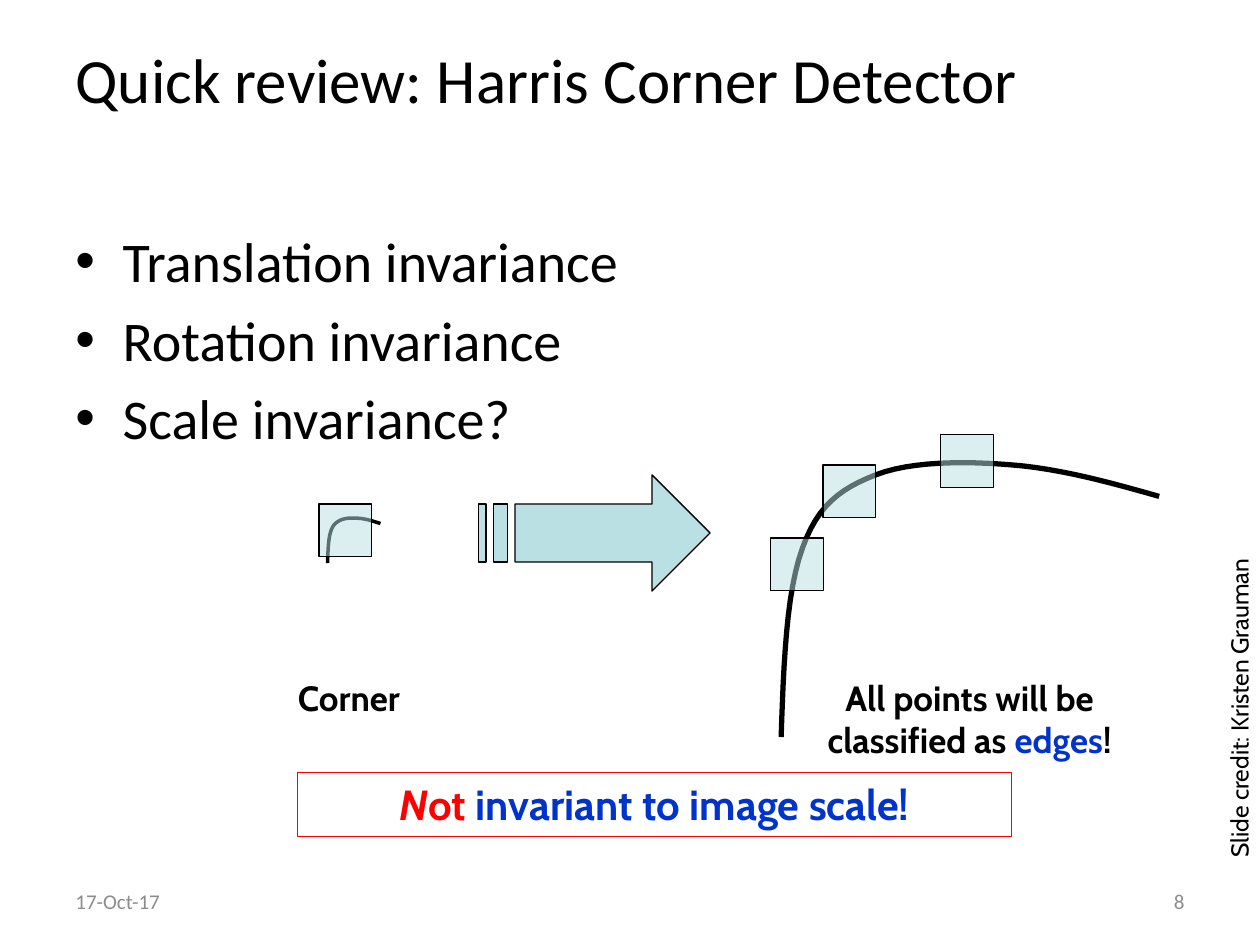
"""Build the slide that reviews the invariances of the Harris corner detector."""
from lxml import etree
from pptx import Presentation
from pptx.dml.color import RGBColor
from pptx.enum.shapes import MSO_SHAPE as SHAPE
from pptx.enum.text import MSO_ANCHOR as ANCHOR, PP_ALIGN as ALIGN
from pptx.oxml.ns import qn
from pptx.util import Pt

BLACK, GREY, RED, BLUE, TEAL = "000000", "8C8C8C", "FF0000", "0033CC", "BBE0E3"
TITLE = "Quick review: Harris Corner Detector"
BULLETS = ["Translation invariance", "Rotation invariance", "Scale invariance?"]
VERDICT = [("N", RED, True, True), ("ot", RED, True, False),
           (" invariant to image scale!", BLUE, True, False)]
EDGES = [("All points will be classified as ", BLACK, True, False),
         ("edges", BLUE, True, False), ("!", BLACK, True, False)]
CORNER = [("Corner", BLACK, True, False)]
CREDIT = [("Slide credit: Kristen Grauman", BLACK, False, False)]
DATE = [("17-Oct-17", GREY, False, False)]
NUMBER = [("8", GREY, False, False)]

CURVE_SIZE = (216, 157.7)
CURVE = [(0, 157.7), (1.4, 116.6), (2.9, 74.9), (12.2, 49.7), (20.9, 25.2),
         (33.8, 15.8), (54, 7.9), (74.2, 0), (105, 0), (131.8, 2.2),
         (159, 4.3), (188, 12.2), (216, 20.2)]
STEPS = 12
WINDOW = 30.2
SCALES = [
    {"box": (187.2, 295.9, 30.2, 25.9), "line": 2, "windows": [(182.2, 288)]},
    {"box": (446.4, 263.5, 216, 157.7), "line": 3,
     "windows": [(440.3, 307.4), (470.2, 265.7), (537.5, 248.4)]},
]
ARROW = (273.6, 271.4, 132.2, 66.4)


def rgb(value):
    return RGBColor.from_string(value)


def style(sp, fill=None, line=BLACK, width=0.75, alpha=None):
    sp.shadow.inherit = False
    if fill:
        sp.fill.solid()
        sp.fill.fore_color.rgb = rgb(fill)
        if alpha:
            color = sp.fill._xPr.find(qn("a:solidFill"))[0]
            etree.SubElement(color, qn("a:alpha"), val=str(alpha * 1000))
    else:
        sp.fill.background()
    sp.line.color.rgb = rgb(line)
    sp.line.width = Pt(width)


def add_run(p, text, size, font, color=BLACK, bold=False, italic=False):
    r = p.add_run()
    r.text = text
    r.font.size, r.font.name = Pt(size), font
    r.font.bold, r.font.italic = bold, italic
    r.font.color.rgb = rgb(color)


def write(sp, runs, size, font="Cabin", align=ALIGN.CENTER, anchor=ANCHOR.TOP):
    tf = sp.text_frame
    tf.word_wrap, tf.vertical_anchor = True, anchor
    p = tf.paragraphs[0]
    p.alignment = align
    for text, color, bold, italic in runs:
        add_run(p, text, size, font, color, bold, italic)


def add_text(s, box, *args, **kwargs):
    sp = s.shapes.add_textbox(*map(Pt, box))
    write(sp, *args, **kwargs)
    return sp


def add_bullets(s, box):
    tf = s.shapes.add_textbox(*map(Pt, box)).text_frame
    tf.word_wrap = True
    for i, text in enumerate(BULLETS):
        p = tf.add_paragraph() if i else tf.paragraphs[0]
        pPr = p._p.get_or_add_pPr()
        pPr.set("marL", str(Pt(27)))
        pPr.set("indent", str(-Pt(27)))
        etree.SubElement(pPr, qn("a:buFont"), typeface="Arial")
        etree.SubElement(pPr, qn("a:buChar"), char="•")
        if i:
            p.space_before = Pt(6.4)
        add_run(p, text, 32, "Calibri")


def bezier(a, b, c, d, t):
    u = 1 - t
    return tuple(u**3 * i + 3 * u * u * t * j + 3 * u * t * t * k + t**3 * m
                 for i, j, k, m in zip(a, b, c, d))


def add_outline(shapes, contours, close):
    first, *rest = [[(Pt(x), Pt(y)) for x, y in c] for c in contours]
    builder = shapes.build_freeform(*first[0])
    builder.add_line_segments(first[1:], close=close)
    for contour in rest:
        builder.move_to(*contour[0])
        builder.add_line_segments(contour[1:], close=close)
    return builder.convert_to_shape()


def add_scale(s, box, line, windows):
    shapes = s.shapes.add_group_shape().shapes
    x, y, w, h = box
    points = [CURVE[0]] + [bezier(*CURVE[i:i + 4], n / STEPS)
                           for i in range(0, len(CURVE) - 1, 3)
                           for n in range(1, STEPS + 1)]
    placed = [(x + px * w / CURVE_SIZE[0], y + py * h / CURVE_SIZE[1])
              for px, py in points]
    style(add_outline(shapes, [placed], False), width=line)
    for left, top in windows:
        sp = shapes.add_shape(SHAPE.RECTANGLE, *map(Pt, (left, top, WINDOW, WINDOW)))
        style(sp, TEAL, alpha=50)


def add_striped_arrow(s):
    x, y, w, h = ARROW
    unit = h / 16
    top, bottom, neck = y + h / 4, y + h * 3 / 4, x + w - h / 2
    shaft = x + 5 * unit
    contours = [[(neck, y), (neck, top), (shaft, top), (shaft, bottom),
                 (neck, bottom), (neck, y + h), (x + w, y + h / 2)]]
    for start, end in [(2, 4), (0, 1)]:
        left, right = x + start * unit, x + end * unit
        contours.append([(left, top), (left, bottom), (right, bottom), (right, top)])
    style(add_outline(s.shapes, contours, True), TEAL)


def main():
    prs = Presentation()
    prs.slide_width, prs.slide_height = Pt(720), Pt(540)
    s = prs.slides.add_slide(prs.slide_layouts[5])

    title = s.shapes.title
    title.left, title.top, title.width, title.height = map(Pt, (36, 0, 648, 90))
    write(title, [(TITLE, BLACK, False, False)], 36, "Calibri", ALIGN.LEFT, ANCHOR.MIDDLE)
    for left, runs, align in [(36, DATE, ALIGN.LEFT), (516, NUMBER, ALIGN.RIGHT)]:
        add_text(s, (left, 500.5, 168, 28.8), runs, 12, "Calibri", align, ANCHOR.MIDDLE)
    add_bullets(s, (36, 126, 648, 356.4))

    verdict = s.shapes.add_shape(SHAPE.RECTANGLE, *map(Pt, (170, 441.4, 408.2, 36.7)))
    style(verdict, line=RED)
    write(verdict, VERDICT, 24)

    for scale in SCALES:
        add_scale(s, **scale)
    add_striped_arrow(s)

    add_text(s, (452.2, 383, 203.8, 55.4), EDGES, 20)
    add_text(s, (145.4, 383, 108, 31.7), CORNER, 20)
    credit = add_text(s, (603.4, 380.2, 209.5, 24.5), CREDIT, 14, align=ALIGN.LEFT)
    credit.rotation = 270
    prs.save("out.pptx")


if __name__ == "__main__":
    main()
